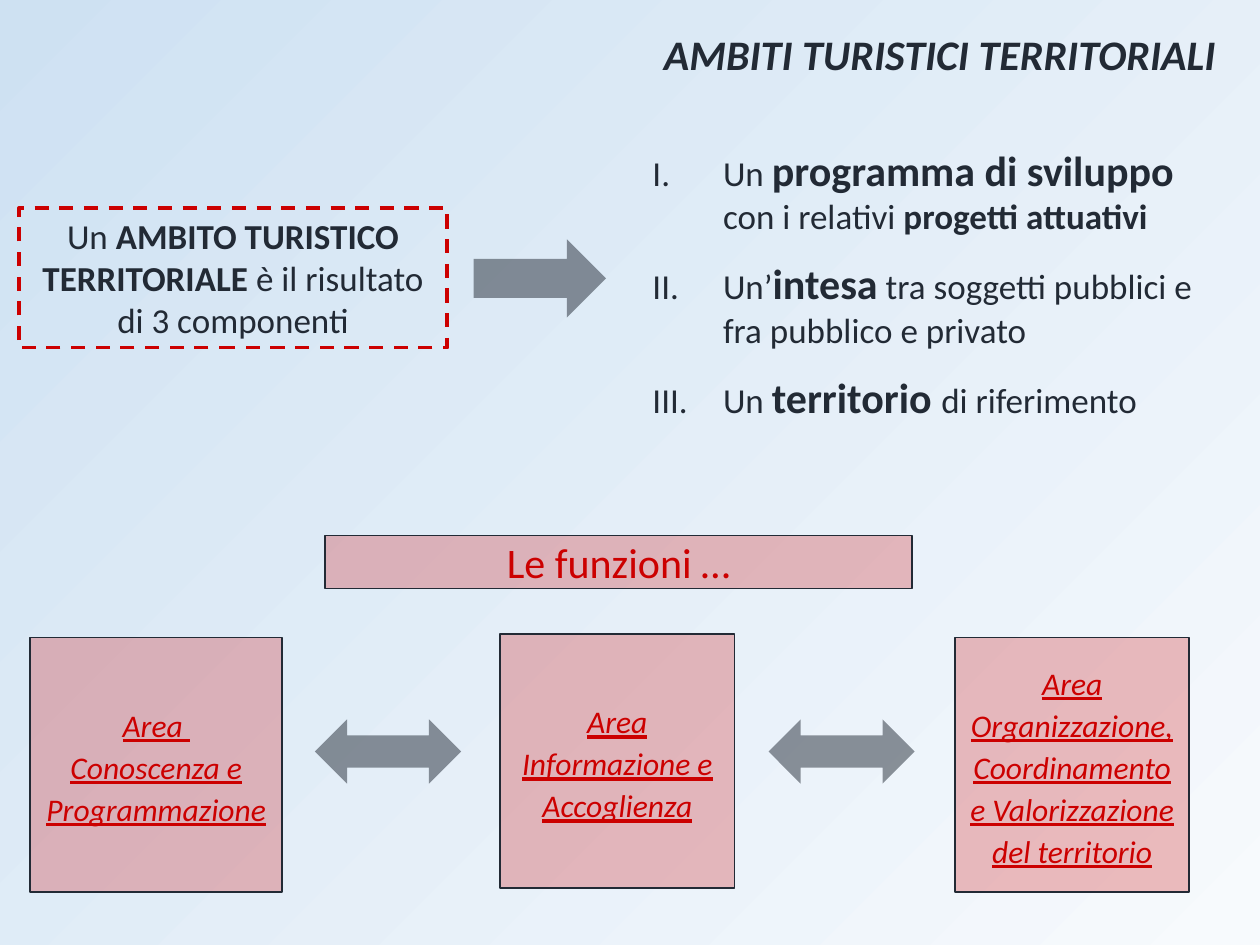
from lxml import etree
from pptx import Presentation
from pptx.dml.color import RGBColor
from pptx.enum import dml, shapes, text
from pptx.oxml.ns import qn
from pptx.util import Inches, Pt

DARK, RED = "222A35", "CC0000"
FONT = "Calibri"


def color(hex_value):
    return RGBColor.from_string(hex_value)


def set_background(slide, start, end):
    fill = slide.background.fill
    fill.gradient()
    fill.gradient_angle = 135
    for stop, hex_value in zip(fill.gradient_stops, (start, end)):
        stop.color.rgb = color(hex_value)


def set_font(font, size, hex_value, **styles):
    font.name, font.size = FONT, Pt(size)
    font.color.rgb = color(hex_value)
    for name, value in styles.items():
        setattr(font, name, value)


def set_frame(frame, anchor=text.MSO_ANCHOR.MIDDLE):
    frame.word_wrap = True
    frame.auto_size = text.MSO_AUTO_SIZE.NONE
    frame.vertical_anchor = anchor


def add_runs(paragraph, runs):
    """Fill a 20 pt paragraph from (wording, size, bold) triples."""
    set_font(paragraph.font, 20, DARK)
    paragraph.space_before = paragraph.space_after = Pt(6)
    for wording, size, bold in runs:
        run = paragraph.add_run()
        run.text = wording
        set_font(run.font, size, DARK, bold=bold)


def add_shape(slide, kind, box, fill=None, opacity=100, line=None, width=1):
    shape = slide.shapes.add_shape(kind, *map(Inches, box))
    shape.shadow.inherit = False
    if fill:
        shape.fill.solid()
        shape.fill.fore_color.rgb = color(fill)
        fill_color = shape.fill._xPr.find(qn("a:solidFill"))[0]
        etree.SubElement(fill_color, qn("a:alpha"), val=str(opacity * 1000))
    else:
        shape.fill.background()
    if line:
        shape.line.color.rgb = color(line)
        shape.line.width = Pt(width)
    else:
        shape.line.fill.background()
    return shape


def add_title(slide, wording):
    title = slide.shapes.title
    title.left, title.top, title.width, title.height = map(Inches, (5.08, 0.18, 4.76, 0.5))
    title.text = wording
    set_frame(title.text_frame, text.MSO_ANCHOR.TOP)
    paragraph = title.text_frame.paragraphs[0]
    paragraph.alignment = text.PP_ALIGN.CENTER
    set_font(paragraph.font, 24, DARK, bold=True, italic=True)


def add_definition(slide, box, runs):
    shape = add_shape(slide, shapes.MSO_SHAPE.RECTANGLE, box, line=RED, width=2)
    shape.line.dash_style = dml.MSO_LINE.DASH
    set_frame(shape.text_frame)
    paragraph = shape.text_frame.paragraphs[0]
    paragraph.alignment = text.PP_ALIGN.CENTER
    add_runs(paragraph, runs)


def add_roman_list(slide, box, items):
    frame = slide.shapes.add_textbox(*map(Inches, box)).text_frame
    set_frame(frame)
    for index, runs in enumerate(items):
        paragraph = frame.add_paragraph() if index else frame.paragraphs[0]
        add_runs(paragraph, runs)
        properties = paragraph._p.get_or_add_pPr()
        properties.set("marL", str(Inches(0.56)))
        properties.set("indent", str(Inches(-0.56)))
        numbering = etree.Element(qn("a:buAutoNum"), type="romanUcPeriod")
        properties.find(qn("a:spcAft")).addnext(numbering)


def add_red_box(slide, box, lines, size, spacing=None, **styles):
    shape = add_shape(slide, shapes.MSO_SHAPE.FLOWCHART_PROCESS, box, RED, 25, DARK)
    frame = shape.text_frame
    set_frame(frame)
    frame.text = "\n".join(lines)
    for paragraph in frame.paragraphs:
        paragraph.alignment = text.PP_ALIGN.CENTER
        paragraph.line_spacing = spacing
        set_font(paragraph.font, size, RED, **styles)


def main():
    presentation = Presentation()
    presentation.slide_width, presentation.slide_height = Inches(10), Inches(7.5)
    slide = presentation.slides.add_slide(presentation.slide_layouts[5])
    set_background(slide, "F7FAFD", "CEE1F2")
    add_title(slide, "AMBITI TURISTICI TERRITORIALI")

    add_definition(slide, (0.15, 1.65, 3.4, 1.11), [
        ("Un ", 20, False),
        ("AMBITO TURISTICO TERRITORIALE ", 20, True),
        ("è il risultato di 3 componenti", 20, False),
    ])
    add_shape(slide, shapes.MSO_SHAPE.RIGHT_ARROW, (3.76, 1.9, 1.05, 0.62), DARK, 50)
    add_roman_list(slide, (5.08, 1.1, 4.59, 2.29), [
        [("Un ", 20, False), ("programma di sviluppo ", 24, True),
         ("con i relativi ", 20, False), ("progetti attuativi", 20, True)],
        [("Un’", 20, False), ("intesa", 24, True),
         (" tra soggetti pubblici e fra pubblico e privato", 20, False)],
        [("Un ", 20, False), ("territorio ", 24, True), ("di riferimento", 20, False)],
    ])

    add_red_box(slide, (2.58, 4.25, 4.66, 0.42), ["Le funzioni …"], 24)
    areas = [
        (0.24, 5.06, 2, ["Area ", "Conoscenza e Programmazione"]),
        (3.97, 5.03, 1.86, ["Area Informazione e Accoglienza"]),
        (7.58, 5.06, 1.86,
         ["Area Organizzazione, Coordinamento e Valorizzazione del territorio"]),
    ]
    for left, top, width, lines in areas:
        add_red_box(slide, (left, top, width, 2.02), lines, 18, Pt(24),
                    italic=True, underline=True)
    for left in (2.5, 6.1):
        add_shape(slide, shapes.MSO_SHAPE.LEFT_RIGHT_ARROW, (left, 5.71, 1.16, 0.51), DARK, 50)

    presentation.save("out.pptx")


if __name__ == "__main__":
    main()
